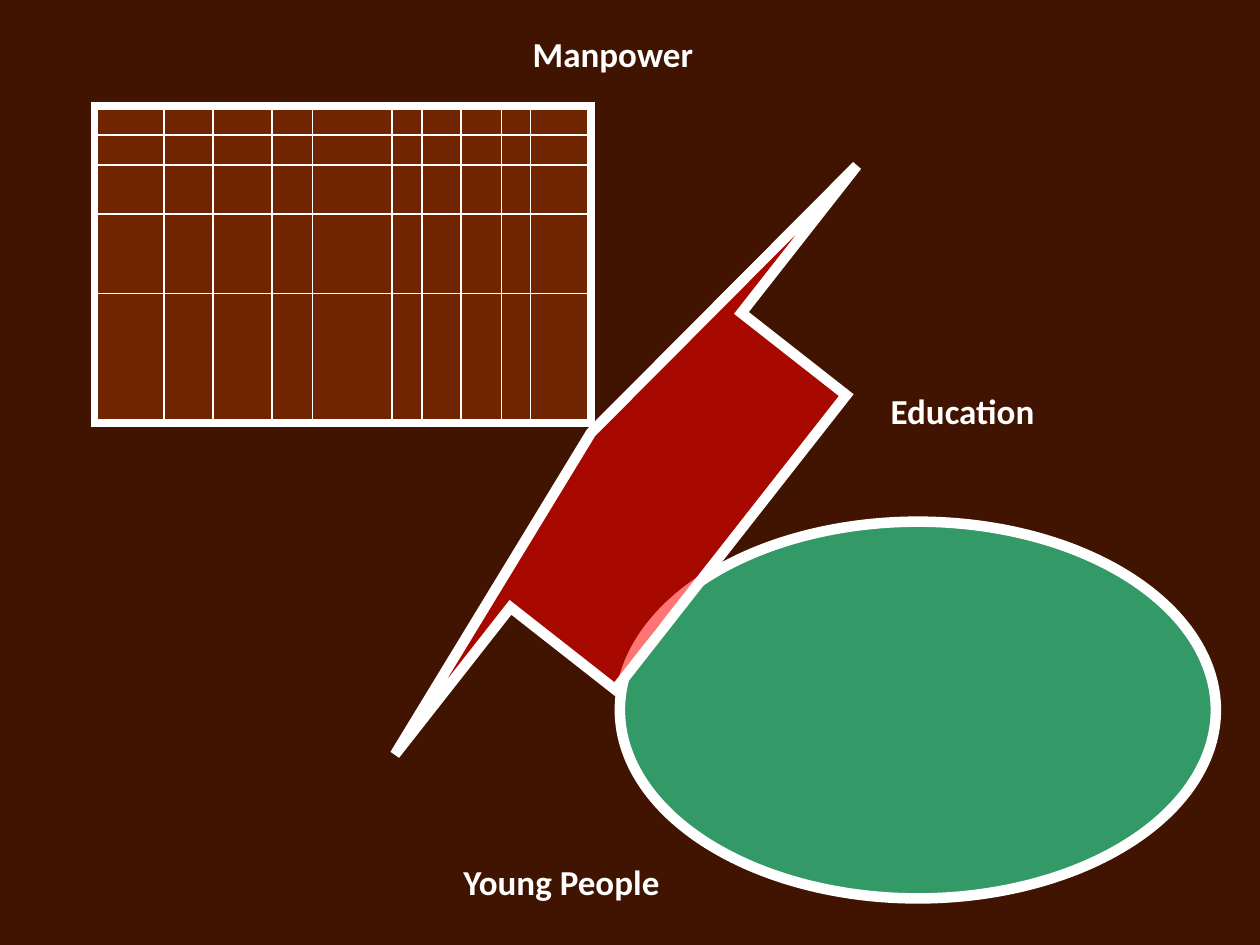
from dataclasses import dataclass

from pptx import Presentation
from pptx.dml.color import RGBColor
from pptx.enum.shapes import MSO_CONNECTOR, MSO_SHAPE
from pptx.enum.text import MSO_AUTO_SIZE
from pptx.oxml.ns import qn
from pptx.slide import Slide
from pptx.util import Inches, Pt
from lxml.etree import SubElement

COLORS = {
    "background": "411401",
    "grid": "702500",
    "people": "339966",
    "arrow": "FF0000",
    "white": "FFFFFF",
}


def color(name):
    return RGBColor.from_string(COLORS[name])


@dataclass
class Diagram:
    """Draws the outlined shapes, grid lines and labels of one slide."""

    slide: Slide
    font: str = "Calibri"
    font_size: int = 20

    def background(self, fill):
        self.slide.background.fill.solid()
        self.slide.background.fill.fore_color.rgb = color(fill)

    def outlined(self, kind, left, top, width, height, fill, line_width, rotation=0, opacity=100):
        shape = self.slide.shapes.add_shape(
            kind, Inches(left), Inches(top), Inches(width), Inches(height))
        shape.shadow.inherit = False
        shape.rotation = rotation
        shape.fill.solid()
        shape.fill.fore_color.rgb = color(fill)
        if opacity < 100:
            fill_color = shape.fill._xPr.find(qn("a:solidFill"))[0]
            SubElement(fill_color, qn("a:alpha"), val=str(opacity * 1000))
        shape.line.color.rgb = color("white")
        shape.line.width = Pt(line_width)
        SubElement(shape.line._get_or_add_ln(), qn("a:miter"), lim="800000")
        return shape

    def line(self, start_x, start_y, end_x, end_y):
        connector = self.slide.shapes.add_connector(
            MSO_CONNECTOR.STRAIGHT, Inches(start_x), Inches(start_y), Inches(end_x), Inches(end_y))
        connector.line.color.rgb = color("white")
        connector.line.width = Pt(1)
        SubElement(connector._element.spPr, qn("a:effectLst"))

    def grid(self, left, top, width, height, rows, columns):
        self.outlined(MSO_SHAPE.RECTANGLE, left, top, width, height, "grid", 4.5)
        for y in rows:
            self.line(left, y, left + width, y)
        for x in columns:
            self.line(x, top, x, top + height)

    def label(self, text, left, top):
        box = self.slide.shapes.add_textbox(Inches(left), Inches(top), Inches(1.97), Inches(0.43))
        text_frame = box.text_frame
        text_frame.word_wrap = True
        text_frame.auto_size = MSO_AUTO_SIZE.SHAPE_TO_FIT_TEXT
        text_frame.text = text
        font = text_frame.paragraphs[0].runs[0].font
        font.name = self.font
        font.size = Pt(self.font_size)
        font.bold = True
        font.color.rgb = color("white")


def main():
    presentation = Presentation()
    presentation.slide_width = Inches(10)
    presentation.slide_height = Inches(7.5)
    diagram = Diagram(presentation.slides.add_slide(presentation.slide_layouts[6]))

    diagram.background("background")
    diagram.grid(
        0.75, 0.84, 3.94, 2.52,
        rows=(2.33, 1.7, 1.31, 1.07),
        columns=(1.3, 1.69, 2.16, 2.48, 3.11, 3.35, 3.66, 3.98, 4.21))
    diagram.outlined(MSO_SHAPE.OVAL, 4.92, 4.14, 4.73, 2.99, "people", 6)
    diagram.label("Manpower", 4.13, 0.21)
    diagram.label("Young People", 3.58, 6.78)
    arrow = diagram.outlined(
        MSO_SHAPE.LEFT_ARROW, 4.54, 0.9, 1.41, 5.94, "arrow", 6, rotation=38.1, opacity=54)
    arrow.adjustments[0] = 0.5
    arrow.adjustments[1] = 0.25
    diagram.label("Education", 6.97, 3.04)

    presentation.save("out.pptx")


if __name__ == "__main__":
    main()
